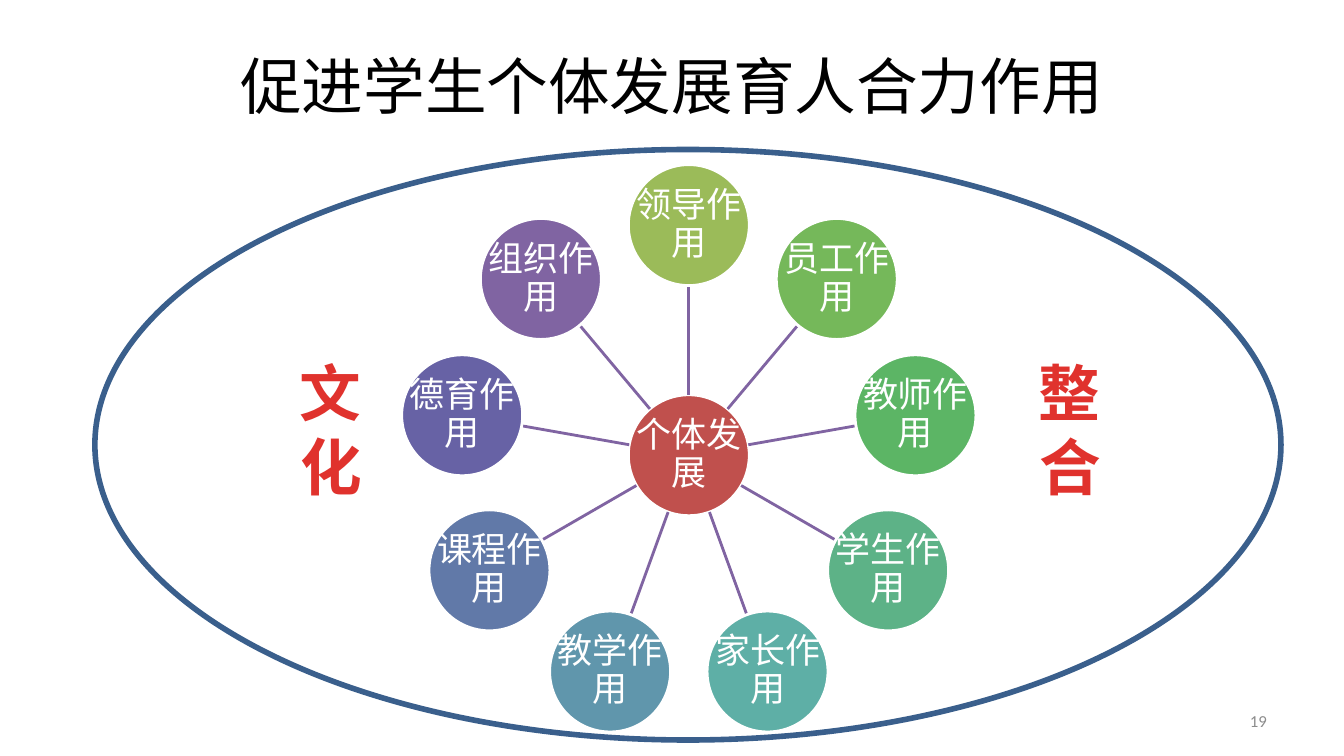
import math
from dataclasses import dataclass

import lxml.etree
import pptx
import pptx.dml.color
import pptx.enum.shapes
import pptx.enum.text
import pptx.oxml.ns
import pptx.shapes.autoshape
import pptx.slide
import pptx.text.text
import pptx.util

RGBColor = pptx.dml.color.RGBColor
Align = pptx.enum.text.PP_ALIGN
Anchor = pptx.enum.text.MSO_ANCHOR

BLACK = RGBColor(0x00, 0x00, 0x00)
WHITE = RGBColor(0xFF, 0xFF, 0xFF)
GREY = RGBColor(0x8C, 0x8C, 0x8C)
RED = RGBColor(0xE0, 0x32, 0x2D)
BRICK = RGBColor(0xC0, 0x50, 0x4D)
PURPLE = RGBColor(0x80, 0x64, 0xA2)
NAVY = RGBColor(0x3A, 0x5F, 0x8C)
OLIVE = RGBColor(0x9B, 0xBB, 0x59)
LEAF = RGBColor(0x75, 0xB8, 0x5A)
GREEN = RGBColor(0x5C, 0xB5, 0x65)
JADE = RGBColor(0x5D, 0xB2, 0x87)
TEAL = RGBColor(0x5E, 0xAF, 0xA6)
CYAN = RGBColor(0x60, 0x96, 0xAC)
STEEL = RGBColor(0x61, 0x79, 0xA8)
INDIGO = RGBColor(0x67, 0x62, 0xA5)

FONT = "Calibri"
WIDTH = pptx.util.Inches(13.33)
HEIGHT = pptx.util.Inches(7.5)
COLS, ROWS = 80, 45
HUB_COL, HUB_ROW = 41, 27.1
DIAMETER = 7.2
ORBIT = 13.7
SPOKE_START, SPOKE_END = 3.6, 10.1


@dataclass(frozen=True)
class Box:
    col: float
    row: float
    cols: float
    rows: float

    def emu(self) -> tuple[int, int, int, int]:
        return x(self.col), y(self.row), x(self.cols), y(self.rows)


@dataclass(frozen=True)
class Role:
    text: str
    color: RGBColor


@dataclass(frozen=True)
class Theme:
    text: str
    box: Box


ROLES = [
    Role("领导作用", OLIVE),
    Role("员工作用", LEAF),
    Role("教师作用", GREEN),
    Role("学生作用", JADE),
    Role("家长作用", TEAL),
    Role("教学作用", CYAN),
    Role("课程作用", STEEL),
    Role("德育作用", INDIGO),
    Role("组织作用", PURPLE),
]
THEMES = [
    Theme("文化", Box(15.5, 23, 8.4, 5)),
    Theme("整合", Box(59.5, 23, 8.4, 5)),
]


def x(cols: float) -> int:
    return round(WIDTH * cols / COLS)


def y(rows: float) -> int:
    return round(HEIGHT * rows / ROWS)


def polar(radius: float, angle: float) -> tuple[float, float]:
    return HUB_COL + radius * math.cos(angle), HUB_ROW + radius * math.sin(angle)


def write(tf: pptx.text.text.TextFrame, text: str, size: float, color: RGBColor,
          align: Align = Align.CENTER) -> pptx.text.text._Paragraph:
    tf.vertical_anchor = Anchor.MIDDLE
    p = tf.paragraphs[0]
    p.text = text
    p.alignment = align
    p.font.name = FONT
    p.font.size = pptx.util.Pt(size)
    p.font.color.rgb = color
    return p


def add_ellipse(s: pptx.slide.Slide, box: Box, line: RGBColor,
                width: float) -> pptx.shapes.autoshape.Shape:
    sp = s.shapes.add_shape(pptx.enum.shapes.MSO_SHAPE.OVAL, *box.emu())
    sp.shadow.inherit = False
    sp.fill.background()
    sp.line.color.rgb = line
    sp.line.width = pptx.util.Pt(width)
    return sp


def add_node(s: pptx.slide.Slide, role: Role, col: float, row: float) -> None:
    box = Box(col - DIAMETER / 2, row - DIAMETER / 2, DIAMETER, DIAMETER)
    sp = add_ellipse(s, box, WHITE, 2)
    sp.fill.solid()
    sp.fill.fore_color.rgb = role.color
    tf = s.shapes.add_textbox(*box.emu()).text_frame
    tf.word_wrap = True
    tf.margin_left = tf.margin_right = x(0.1)
    tf.margin_top = tf.margin_bottom = y(0.1)
    write(tf, role.text, 25, WHITE).line_spacing = 0.9


def add_spoke(s: pptx.slide.Slide, angle: float) -> None:
    col, row = polar(SPOKE_START, angle)
    end_col, end_row = polar(SPOKE_END, angle)
    line = s.shapes.add_connector(pptx.enum.shapes.MSO_CONNECTOR.STRAIGHT,
                                  x(col), y(row), x(end_col), y(end_row))
    line.line.color.rgb = PURPLE
    line.line.width = pptx.util.Pt(2)
    lxml.etree.SubElement(line._element.spPr, pptx.oxml.ns.qn("a:effectLst"))


def add_theme(s: pptx.slide.Slide, theme: Theme) -> None:
    tf = s.shapes.add_textbox(*theme.box.emu()).text_frame
    tf.word_wrap = False
    p = write(tf, theme.text, 44, RED)
    p.font.bold = True
    p.runs[0].font._element.set("spc", "50")


def main() -> None:
    prs = pptx.Presentation()
    prs.slide_width, prs.slide_height = WIDTH, HEIGHT
    s = prs.slides.add_slide(prs.slide_layouts.get_by_name("Title Only"))

    title = s.shapes.title
    title.left, title.top, title.width, title.height = Box(4, 1.3, 72, 7.5).emu()
    write(title.text_frame, "促进学生个体发展育人合力作用", 44, BLACK)

    add_node(s, Role("个体发展", BRICK), HUB_COL, HUB_ROW)
    for i, role in enumerate(ROLES):
        angle = math.tau * i / len(ROLES) - math.pi / 2
        add_spoke(s, angle)
        add_node(s, role, *polar(ORBIT, angle))

    add_ellipse(s, Box(5.65, 8.9, 70.6, 35.15), NAVY, 4)
    for theme in THEMES:
        add_theme(s, theme)

    number = s.shapes.add_textbox(*Box(57.35, 41.7, 18.65, 2.4).emu())
    write(number.text_frame, "19", 12, GREY, Align.RIGHT)
    prs.save("out.pptx")


if __name__ == "__main__":
    main()
